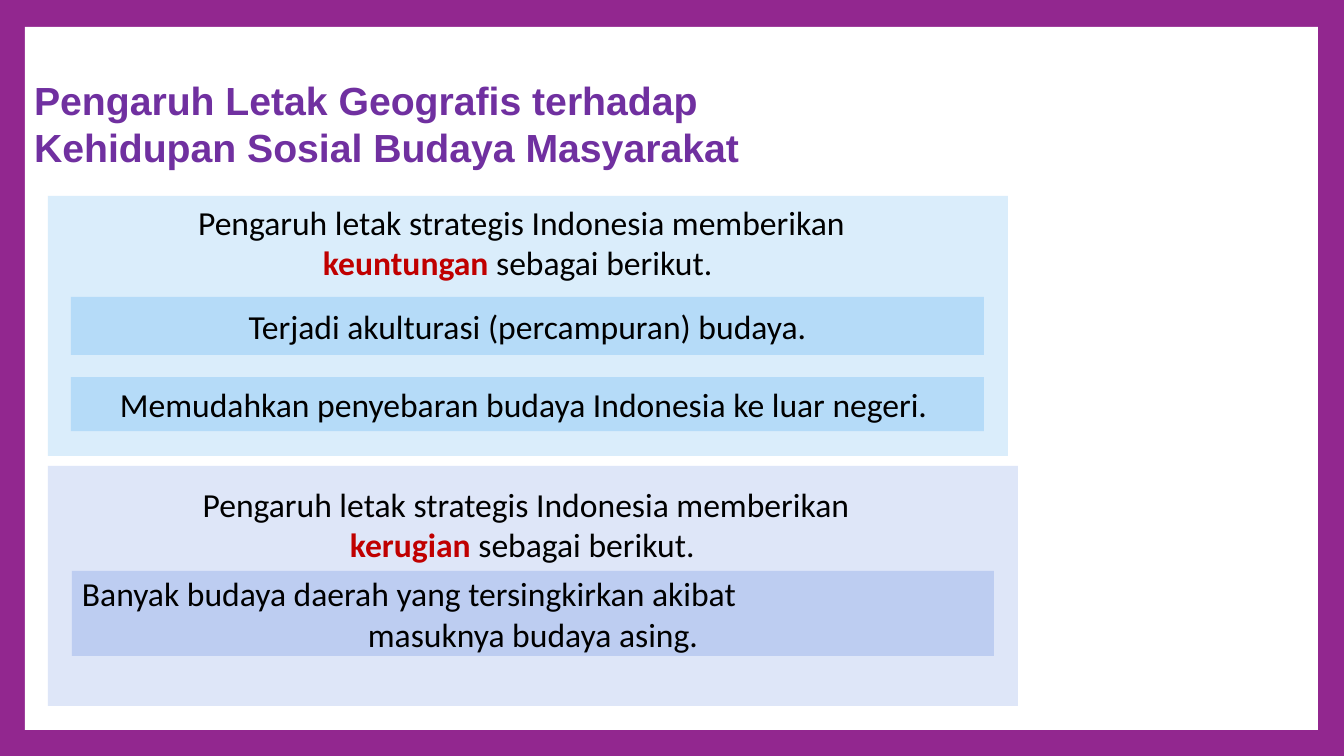
from dataclasses import dataclass

from pptx import Presentation
from pptx.dml.color import RGBColor
from pptx.enum.shapes import MSO_SHAPE
from pptx.enum.text import MSO_ANCHOR, MSO_AUTO_SIZE, PP_ALIGN
from pptx.util import Pt

RECTANGLE, PENTAGON = MSO_SHAPE.RECTANGLE, MSO_SHAPE.PENTAGON
LEFT, CENTER = PP_ALIGN.LEFT, PP_ALIGN.CENTER
TOP, MIDDLE = MSO_ANCHOR.TOP, MSO_ANCHOR.MIDDLE
FIXED_SIZE = MSO_AUTO_SIZE.NONE


@dataclass(frozen=True)
class Theme:
    frame: str = "92278F"
    paper: str = "FFFFFF"
    title: str = "7030A0"
    text: str = "000000"
    accent: str = "C00000"
    title_font: str = "Arial"
    body_font: str = "Calibri"
    title_size: int = 28
    body_size: int = 24


THEME = Theme()

# Content: boxes are (left, top, width, height) in px
PAGE_SIZE = (1344, 756)
PAPER_BOX = (25, 27, 1293, 703)
TITLE_BOX = (24, 71, 737, 105)
TITLE = "Pengaruh Letak Geografis terhadap Kehidupan Sosial Budaya Masyarakat"
INTRO = "Pengaruh letak strategis Indonesia memberikan "
OUTRO = "sebagai berikut. "
PANELS = [
    {
        "box": (48, 196, 960, 260), "fill": "DAEDFB", "bar_fill": "B5DBF8",
        "keyword": "keuntungan ", "intro_box": (171, 197, 701, 92),
        "bars": [
            ((71, 297, 913, 58),
             [("Terjadi akulturasi (percampuran) budaya.", CENTER)]),
            ((71, 377, 913, 54),
             [("Memudahkan penyebaran budaya Indonesia ke luar negeri. ", CENTER)]),
        ],
    },
    {
        "box": (48, 466, 970, 240), "fill": "DEE6F8", "bar_fill": "BDCDF1",
        "keyword": "kerugian ", "intro_box": (180, 479, 692, 92),
        "bars": [
            ((72, 571, 922, 85),
             [("Banyak budaya daerah yang tersingkirkan akibat", LEFT),
              ("masuknya budaya asing.", CENTER)]),
        ],
    },
]

EMU_PER_PX = 914400 / 100.8


def emu(lengths):
    return [round(length * EMU_PER_PX) for length in lengths]


def style(span, color=THEME.text, bold=False,
          font=THEME.body_font, size=THEME.body_size):
    span.font.name = font
    span.font.size = Pt(size)
    span.font.bold = bold
    span.font.color.rgb = RGBColor.from_string(color)


def add_block(page, kind, box, fill):
    block = page.shapes.add_shape(kind, *emu(box))
    block.shadow.inherit = False
    block.fill.solid()
    block.fill.fore_color.rgb = RGBColor.from_string(fill)
    block.line.fill.background()
    return block


def add_intro(page, box, keyword):
    frame = page.shapes.add_textbox(*emu(box)).text_frame
    frame.word_wrap = True
    para = frame.paragraphs[0]
    para.alignment = CENTER
    for text in (INTRO, keyword, OUTRO):
        span = para.add_run()
        span.text = text
        is_keyword = text == keyword
        style(span, THEME.accent if is_keyword else THEME.text, is_keyword)


def add_bar(page, box, fill, lines):
    bar = add_block(page, PENTAGON, box, fill)
    bar.adjustments[0] = 0
    frame = bar.text_frame
    frame.word_wrap = True
    frame.vertical_anchor = MIDDLE
    frame.text = "\n".join(text for text, _ in lines)
    for para, (_, alignment) in zip(frame.paragraphs, lines):
        para.alignment = alignment
        style(para.runs[0])


def add_title(page):
    title = page.shapes.title
    title.left, title.top, title.width, title.height = emu(TITLE_BOX)
    frame = title.text_frame
    frame.text = TITLE
    frame.word_wrap = True
    frame.auto_size = FIXED_SIZE
    frame.vertical_anchor = TOP
    para = frame.paragraphs[0]
    para.alignment = LEFT
    style(para.runs[0], THEME.title, True, THEME.title_font, THEME.title_size)
    return title


def main():
    deck = Presentation()
    deck.slide_width, deck.slide_height = emu(PAGE_SIZE)
    page = deck.slides.add_slide(deck.slide_layouts[5])

    # Purple frame, white paper behind the title
    page.background.fill.solid()
    page.background.fill.fore_color.rgb = RGBColor.from_string(THEME.frame)
    title = add_title(page)
    paper = add_block(page, RECTANGLE, PAPER_BOX, THEME.paper)
    title.element.addprevious(paper.element)

    # Advantage and disadvantage panels
    for panel in PANELS:
        add_block(page, RECTANGLE, panel["box"], panel["fill"])
        add_intro(page, panel["intro_box"], panel["keyword"])
        for box, lines in panel["bars"]:
            add_bar(page, box, panel["bar_fill"], lines)

    deck.save("out.pptx")


if __name__ == "__main__":
    main()
